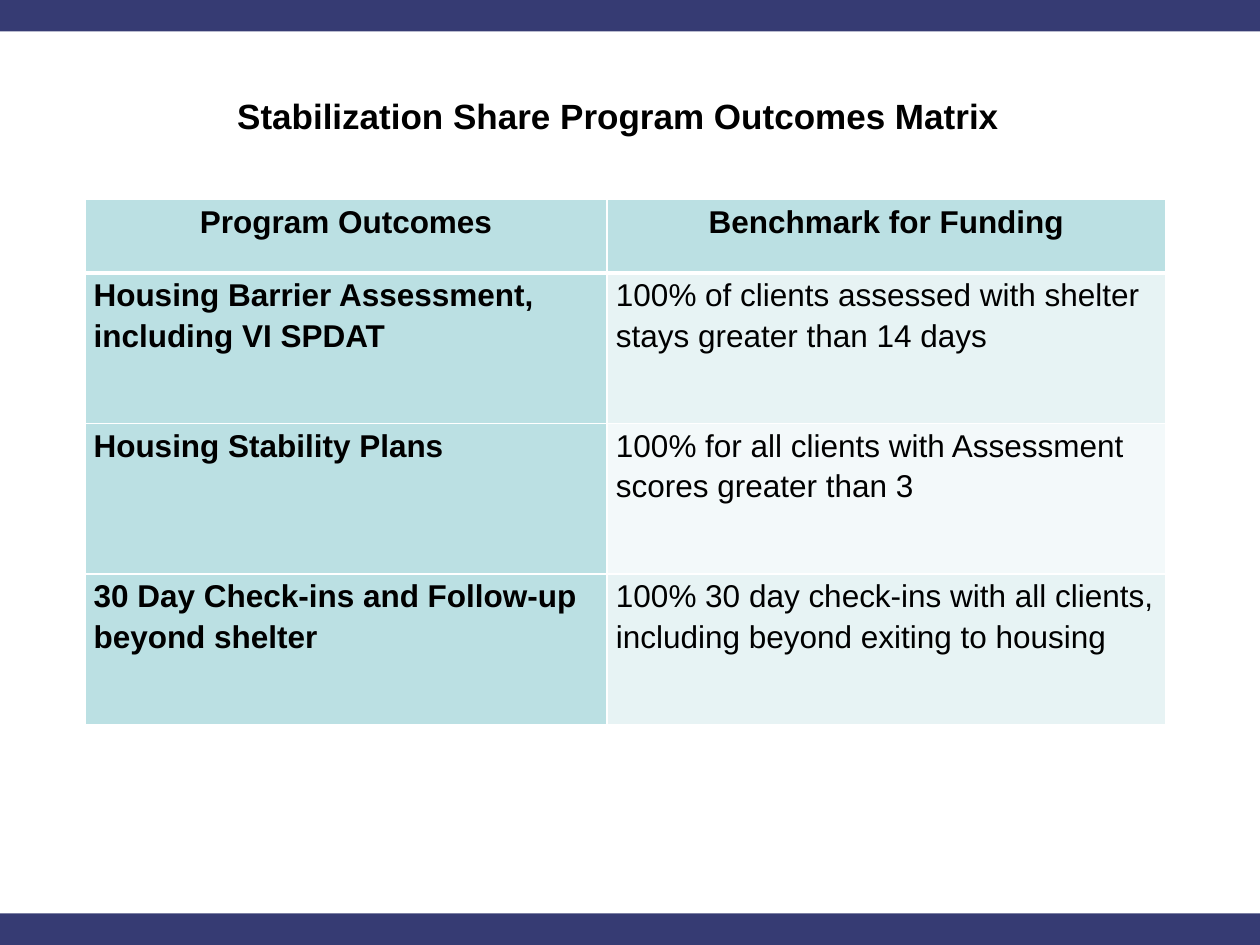
from dataclasses import dataclass

from lxml import etree
from pptx import Presentation
from pptx import util as u
from pptx.dml.color import RGBColor
from pptx.enum import shapes, text
from pptx.oxml import ns


@dataclass(frozen=True)
class Theme:
    font: str = "Arial"
    title_size: float = 20
    cell_size: float = 18
    ink: str = "000000"
    frame: str = "363B73"
    paper: str = "FFFFFF"
    heading: str = "BBE0E3"
    bands: tuple[str, str] = ("E7F3F4", "F3F9FA")


@dataclass(frozen=True)
class Outcome:
    name: str
    benchmark: str


THEME = Theme()
PAGE_WIDTH, PAGE_HEIGHT, BAR_HEIGHT = 720, 540, 18
COLUMN_WIDTHS = (298.5, 319)
HEADER_HEIGHT, ROW_HEIGHT = 42, 86
THIN_RULE, HEADER_RULE = 1, 3

HEADINGS = ("Program Outcomes", "Benchmark for Funding")
OUTCOMES = (
    Outcome("Housing Barrier Assessment, including VI SPDAT",
            "100% of clients assessed with shelter stays greater than 14 days"),
    Outcome("Housing Stability Plans",
            "100% for all clients with Assessment scores greater than 3"),
    Outcome("30 Day Check-ins and Follow-up beyond shelter",
            "100% 30 day check-ins with all clients, including beyond exiting to housing"),
)


def write(frame, words: str, *, size: float, bold: bool = False,
          centred: bool = False, spacing: float = 1.0) -> None:
    frame.word_wrap = True
    para = frame.paragraphs[0]
    para.alignment = text.PP_ALIGN.CENTER if centred else text.PP_ALIGN.LEFT
    para.line_spacing = spacing
    span = para.add_run()
    span.text = words
    span.font.name = THEME.font
    span.font.size = u.Pt(size)
    span.font.bold = bold
    span.font.color.rgb = RGBColor.from_string(THEME.ink)


def set_borders(cell, top: float, bottom: float) -> None:
    """Rule all four sides; the cell's fill must already be set."""
    properties = cell._tc.get_or_add_tcPr()
    widths = {"lnL": THIN_RULE, "lnR": THIN_RULE, "lnT": top, "lnB": bottom}
    for index, (side, width) in enumerate(widths.items()):
        line = etree.Element(ns.qn(f"a:{side}"), w=str(u.Pt(width)))
        fill = etree.SubElement(line, ns.qn("a:solidFill"))
        etree.SubElement(fill, ns.qn("a:srgbClr"), val=THEME.paper)
        properties.insert(index, line)


def fill_cell(cell, words: str, colour: str, *, bold: bool = True,
              centred: bool = False, top: float = THIN_RULE,
              bottom: float = THIN_RULE) -> None:
    cell.margin_left = cell.margin_right = u.Pt(5)
    cell.margin_top = cell.margin_bottom = u.Pt(0)
    cell.fill.solid()
    cell.fill.fore_color.rgb = RGBColor.from_string(colour)
    set_borders(cell, top, bottom)
    write(cell.text_frame, words, size=THEME.cell_size, bold=bold,
          centred=centred, spacing=1.15)


def draw_background(page) -> None:
    page.background.fill.solid()
    page.background.fill.fore_color.rgb = RGBColor.from_string(THEME.frame)
    panel = page.shapes.add_shape(
        shapes.MSO_SHAPE.RECTANGLE, u.Pt(0), u.Pt(BAR_HEIGHT),
        u.Pt(PAGE_WIDTH), u.Pt(PAGE_HEIGHT - 2 * BAR_HEIGHT))
    panel.shadow.inherit = False
    panel.fill.solid()
    panel.fill.fore_color.rgb = RGBColor.from_string(THEME.paper)
    panel.line.fill.background()


def draw_title(page) -> None:
    box = page.shapes.add_textbox(u.Pt(90), u.Pt(49), u.Pt(526.5), u.Pt(53))
    box.text_frame.vertical_anchor = text.MSO_ANCHOR.TOP
    box.text_frame.margin_top = u.Pt(5)
    write(box.text_frame, "Stabilization Share Program Outcomes Matrix",
          size=THEME.title_size, bold=True, centred=True)


def draw_matrix(page) -> None:
    heights = [HEADER_HEIGHT] + [ROW_HEIGHT] * len(OUTCOMES)
    table = page.shapes.add_table(
        len(heights), len(COLUMN_WIDTHS), u.Pt(48.5), u.Pt(114),
        u.Pt(sum(COLUMN_WIDTHS)), u.Pt(sum(heights))).table
    for column, width in zip(table.columns, COLUMN_WIDTHS):
        column.width = u.Pt(width)
    for row, height in zip(table.rows, heights):
        row.height = u.Pt(height)
    for column, heading in enumerate(HEADINGS):
        fill_cell(table.cell(0, column), heading, THEME.heading,
                  centred=True, bottom=HEADER_RULE)
    for row, outcome in enumerate(OUTCOMES, start=1):
        top = HEADER_RULE if row == 1 else THIN_RULE
        band = THEME.bands[(row - 1) % len(THEME.bands)]
        fill_cell(table.cell(row, 0), outcome.name, THEME.heading, top=top)
        fill_cell(table.cell(row, 1), outcome.benchmark, band,
                  bold=False, top=top)


def main() -> None:
    deck = Presentation()
    deck.slide_width, deck.slide_height = u.Pt(PAGE_WIDTH), u.Pt(PAGE_HEIGHT)
    page = deck.slides.add_slide(deck.slide_layouts[6])
    draw_background(page)
    draw_matrix(page)
    draw_title(page)
    deck.save("out.pptx")


if __name__ == "__main__":
    main()
